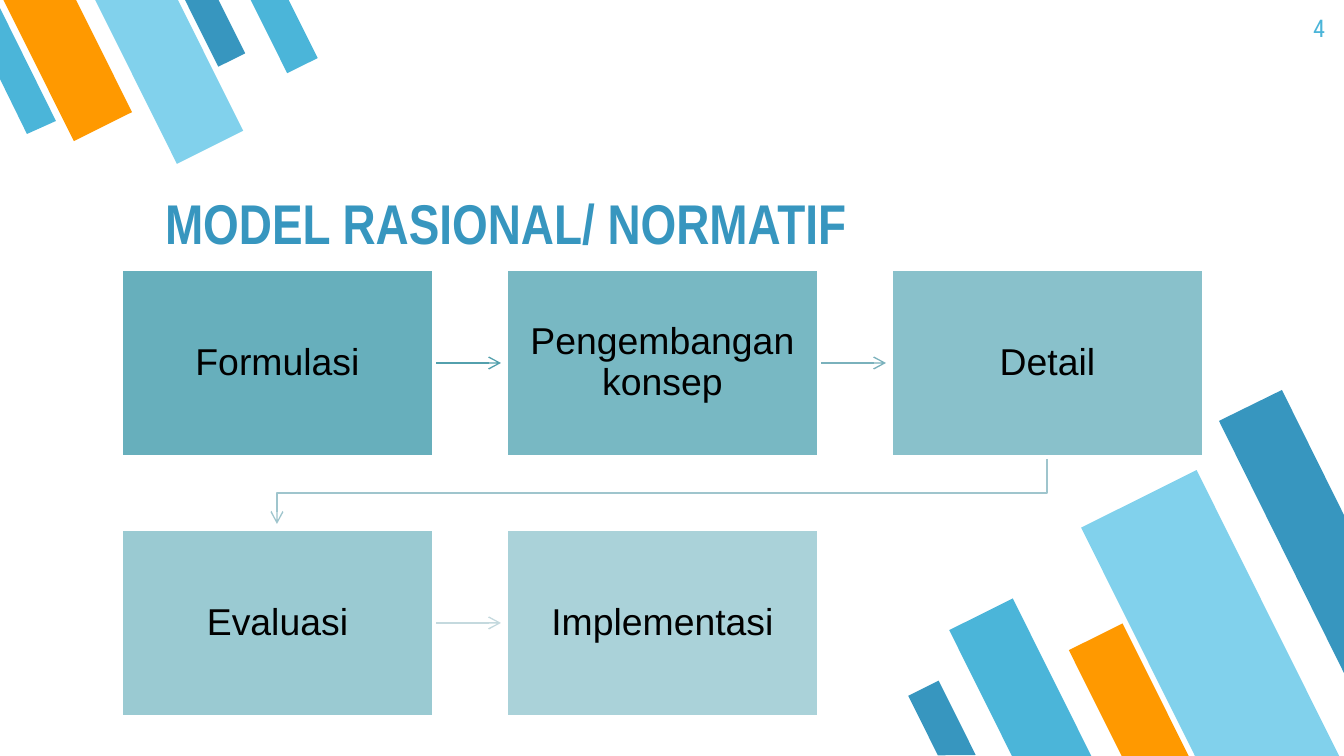
import pptx
import pptx.util
from pptx.dml.color import RGBColor
from pptx.enum.shapes import MSO_CONNECTOR, MSO_SHAPE
from pptx.enum.text import MSO_ANCHOR, PP_ALIGN
from pptx.oxml.ns import qn
from lxml import etree

EMU_PER_PX = 914400 / 134.4
NAVY, SKY, PALE, ORANGE, TEAL = "3796BF", "4BB5D9", "81D1EC", "FF9900", "57A7B5"
BOX_W, BOX_H = 313, 188
LEFT, TOP, COL_STEP, ROW_STEP = 121, 269, 385, 260
ARROW_LEN = 67

# left, top, width, height, colour
BOTTOM_BARS = [
    (985, 605, 71, 177, SKY),
    (1146, 482, 129, 321, PALE),
    (1099, 629, 60, 149, ORANGE),
    (925, 684, 34, 83, NAVY),
]
TOP_BARS = [
    (200, -11, 30, 75, NAVY),
    (35, -24, 65, 159, ORANGE),
    (132, -27, 74, 184, PALE),
    (267, -13, 34, 83, SKY),
]
RIGHT_EDGE_BAR = [(1282, 390), (1219, 421), (1344, 673), (1344, 515)]
LEFT_EDGE_BAR = [(27, 134), (56, 121), (0, 8), (0, 79)]

# label, column, row, opacity in percent
STEPS = [
    ("Formulasi", 0, 0, 90),
    ("Pengembangan konsep", 1, 0, 80),
    ("Detail", 2, 0, 70),
    ("Evaluasi", 0, 1, 60),
    ("Implementasi", 1, 1, 50),
]


def px(n):
    return pptx.util.Emu(round(n * EMU_PER_PX))


def rgb(color):
    return RGBColor.from_string(color)


def paint(sp, color):
    """Plain fill without outline or shadow."""
    sp.shadow.inherit = False
    sp.fill.solid()
    sp.fill.fore_color.rgb = rgb(color)
    sp.line.fill.background()


def add_bar(s, left, top, width, height, color, angle):
    sp = s.shapes.add_shape(MSO_SHAPE.FLOWCHART_MANUAL_INPUT,
                            px(left), px(top), px(width), px(height))
    sp.rotation = angle
    sp.element.spPr.find(qn("a:xfrm")).set("flipH", "1")
    paint(sp, color)


def add_outline(s, points, close=True):
    builder = s.shapes.build_freeform(*points[0], scale=EMU_PER_PX)
    builder.add_line_segments(points[1:], close=close)
    return builder.convert_to_shape()


def add_text(s, text, left, top, width, height, font, size, color,
             bold=False, align=PP_ALIGN.LEFT, anchor=MSO_ANCHOR.TOP):
    sp = s.shapes.add_textbox(px(left), px(top), px(width), px(height))
    set_text(sp, text, font, size, color, 13, bold, align, anchor)


def set_text(sp, text, font, size, color, inset, bold, align, anchor):
    tf = sp.text_frame
    tf.word_wrap = True
    tf.vertical_anchor = anchor
    tf.margin_left = tf.margin_right = tf.margin_top = tf.margin_bottom = px(inset)
    p = tf.paragraphs[0]
    p.text = text
    p.alignment = align
    p.font.name = font
    p.font.size = pptx.util.Pt(size)
    p.font.bold = bold
    p.font.color.rgb = rgb(color)
    return p


def add_step(s, label, col, row, opacity):
    sp = s.shapes.add_shape(MSO_SHAPE.RECTANGLE, px(LEFT + col * COL_STEP),
                            px(TOP + row * ROW_STEP), px(BOX_W), px(BOX_H))
    paint(sp, TEAL)
    fill = sp.element.spPr.find(qn("a:solidFill"))
    etree.SubElement(fill[0], qn("a:alpha"), val=str(opacity * 1000))
    sp.line.color.rgb = rgb("FFFFFF")
    sp.line.width = pptx.util.Pt(2)
    p = set_text(sp, label, "Arial", 20, "000000", 22, False,
                 PP_ALIGN.CENTER, MSO_ANCHOR.MIDDLE)
    p.line_spacing = 0.9
    return sp


def style_arrow(sp, color):
    sp.line.color.rgb = rgb(color)
    sp.line.width = pptx.util.Pt(0.75)
    spPr = sp.element.spPr
    etree.SubElement(spPr.find(qn("a:ln")), qn("a:tailEnd"), type="arrow")
    if spPr.find(qn("a:effectLst")) is None:
        etree.SubElement(spPr, qn("a:effectLst"))


def add_arrow(s, box, color):
    """Arrow from the right side of a box, placed behind it."""
    x, y = box.left + box.width, box.top + box.height // 2
    cx = s.shapes.add_connector(MSO_CONNECTOR.STRAIGHT, x, y, x + px(ARROW_LEN), y)
    cx.begin_connect(box, 3)
    style_arrow(cx, color)
    box.element.addprevious(cx.element)


def add_return_arrow(s, color):
    """Bent arrow from the last box of the first row to the next row."""
    start = LEFT + 2 * COL_STEP + BOX_W // 2
    end = LEFT + BOX_W // 2
    points = [(start, 459), (start, 493), (end, 493), (end, 524)]
    sp = add_outline(s, points, close=False)
    sp.shadow.inherit = False
    sp.fill.background()
    style_arrow(sp, color)


def main():
    prs = pptx.Presentation()
    prs.slide_width, prs.slide_height = px(1344), px(756)
    s = prs.slides.add_slide(prs.slide_layouts[6])

    for bars, angle in ((BOTTOM_BARS, 153.5), (TOP_BARS, 333.5)):
        for bar in bars:
            add_bar(s, *bar, angle)
    paint(add_outline(s, RIGHT_EDGE_BAR), NAVY)
    paint(add_outline(s, LEFT_EDGE_BAR), SKY)

    add_text(s, "MODEL RASIONAL/ NORMATIF", 152, 169, 847, 100, "Arial Narrow", 30,
             NAVY, bold=True, anchor=MSO_ANCHOR.BOTTOM)

    boxes = [add_step(s, *step) for step in STEPS]
    for i, color in ((0, "53A0AD"), (1, "7AB1BC"), (3, "C4D9DE")):
        add_arrow(s, boxes[i], color)
    add_return_arrow(s, "9FC5CD")

    add_text(s, "4", 1258, 0, 80, 58, "Roboto Condensed", 13, SKY,
             align=PP_ALIGN.RIGHT)
    prs.save("out.pptx")


if __name__ == "__main__":
    main()
